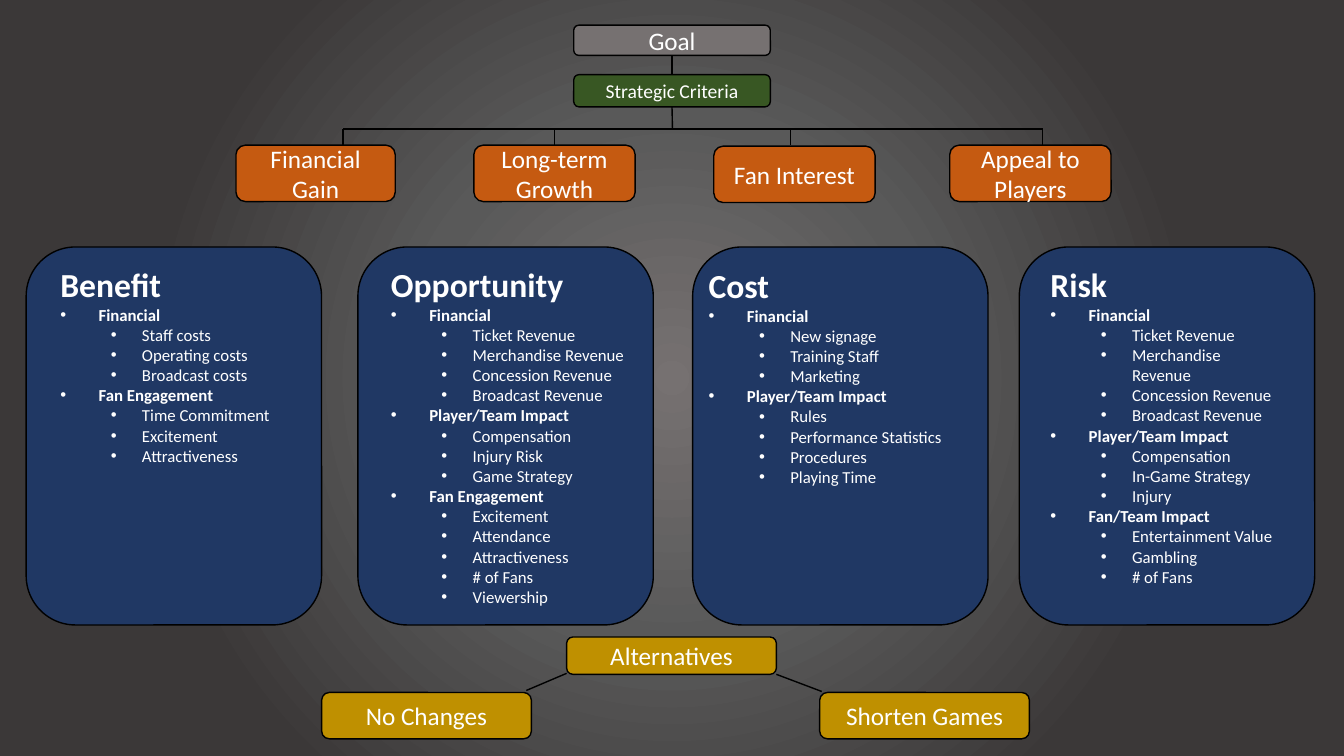
from dataclasses import dataclass
from typing import Optional

from pptx import Presentation
from pptx.dml.color import RGBColor
from pptx.enum.shapes import MSO_CONNECTOR, MSO_SHAPE
from pptx.enum.text import MSO_ANCHOR, MSO_AUTO_SIZE, PP_ALIGN
from pptx.oxml import parse_xml
from pptx.oxml.ns import nsdecls, qn
from pptx.shapes.autoshape import Shape
from pptx.shapes.connector import Connector
from pptx.slide import Slide
from pptx.text.text import Font, _Paragraph
from pptx.util import Inches, Pt

COLORS = {
    "goal": "767171",
    "strategy": "385723",
    "criterion": "C55A11",
    "panel": "203864",
    "alternative": "BF9000",
    "line": "000000",
    "text": "FFFFFF",
}
BACKGROUND = [(0, "767171"), (34, "595959"), (69, "3B3838"), (97, "3B3838")]
FORMATS = {
    "box": {"size": Pt(18)},
    "small": {"size": Pt(14)},
    "title": {"size": Pt(24), "bold": True},
    "heading": {"size": Pt(12), "bold": True},
    "item": {"size": Pt(12), "bold": False},
}
INDENTS = [(0.38, -0.38), (0.81, -0.31)]
PANEL_TOP, PANEL_WIDTH, PANEL_HEIGHT = 2.45, 2.93, 3.75
BRANCH_Y = 1.28


@dataclass
class Box:
    text: str
    left: float
    top: float
    width: float
    height: float
    color: str
    style: str = "box"


@dataclass
class Panel:
    title: str
    left: float
    text_left: float
    text_top: float
    text_width: float
    text_height: float
    groups: dict[str, list[str]]


GOAL = Box("Goal", 5.69, 0.25, 1.95, 0.3, "goal")
STRATEGY = Box("Strategic Criteria", 5.69, 0.74, 1.95, 0.32, "strategy", "small")
CRITERIA = [
    (Box("Financial Gain", 2.34, 1.44, 1.58, 0.56, "criterion"), 3.4),
    (Box("Long-term Growth", 4.7, 1.44, 1.6, 0.56, "criterion"), 5.5),
    (Box("Fan Interest", 7.08, 1.45, 1.6, 0.56, "criterion"), 7.84),
    (Box("Appeal to Players", 9.42, 1.44, 1.6, 0.56, "criterion"), 10.34),
]
ALTERNATIVES = [
    Box("Alternatives", 5.62, 6.32, 2.08, 0.37, "alternative"),
    Box("No Changes", 3.19, 6.87, 2.08, 0.46, "alternative"),
    Box("Shorten Games", 8.13, 6.87, 2.08, 0.46, "alternative"),
]
PANELS = [
    Panel("Benefit", 0.26, 0.5, 2.57, 2.48, 2.13, {
        "Financial": ["Staff costs", "Operating costs", "Broadcast costs"],
        "Fan Engagement": ["Time Commitment", "Excitement", "Attractiveness"],
    }),
    Panel("Opportunity", 3.55, 3.78, 2.57, 2.54, 3.53, {
        "Financial": ["Ticket Revenue", "Merchandise Revenue",
                      "Concession Revenue", "Broadcast Revenue"],
        "Player/Team Impact": ["Compensation", "Injury Risk", "Game Strategy"],
        "Fan Engagement": ["Excitement", "Attendance", "Attractiveness",
                           "# of Fans", "Viewership"],
    }),
    Panel("Cost", 6.87, 6.93, 2.58, 2.79, 2.32, {
        "Financial": ["New signage", "Training Staff", "Marketing"],
        "Player/Team Impact": ["Rules", "Performance Statistics",
                               "Procedures", "Playing Time"],
    }),
    Panel("Risk", 10.11, 10.32, 2.57, 2.5, 3.33, {
        "Financial": ["Ticket Revenue", "Merchandise Revenue",
                      "Concession Revenue", "Broadcast Revenue"],
        "Player/Team Impact": ["Compensation", "In-Game Strategy", "Injury"],
        "Fan/Team Impact": ["Entertainment Value", "Gambling", "# of Fans"],
    }),
]


def rgb(name: str) -> RGBColor:
    return RGBColor.from_string(COLORS[name])


def set_background(s: Slide) -> None:
    stops = "".join(
        f'<a:gs pos="{pos * 1000}"><a:srgbClr val="{color}"/></a:gs>'
        for pos, color in BACKGROUND
    )
    s.background.fill.gradient()
    grad = next(s.element.iter(qn("a:gradFill")))
    grad.getparent().replace(grad, parse_xml(
        f'<a:gradFill {nsdecls("a")} rotWithShape="1"><a:gsLst>{stops}</a:gsLst>'
        '<a:path path="circle"><a:fillToRect l="50000" t="50000" r="50000" b="50000"/>'
        '</a:path></a:gradFill>'
    ))


def format_font(font: Font, style: str) -> None:
    for name, value in {"name": "Calibri", **FORMATS[style]}.items():
        setattr(font, name, value)
    font.color.rgb = rgb("text")


def add_round_rect(s: Slide, left: float, top: float, width: float,
                   height: float, color: str) -> Shape:
    sp = s.shapes.add_shape(MSO_SHAPE.ROUNDED_RECTANGLE, Inches(left), Inches(top),
                            Inches(width), Inches(height))
    sp.shadow.inherit = False
    sp.fill.solid()
    sp.fill.fore_color.rgb = rgb(color)
    sp.line.color.rgb = rgb("line")
    sp.line.width = Pt(1)
    return sp


def add_box(s: Slide, box: Box) -> Shape:
    sp = add_round_rect(s, box.left, box.top, box.width, box.height, box.color)
    tf = sp.text_frame
    tf.word_wrap = True
    tf.vertical_anchor = MSO_ANCHOR.MIDDLE
    p = tf.paragraphs[0]
    p.alignment = PP_ALIGN.CENTER
    r = p.add_run()
    r.text = box.text
    format_font(r.font, box.style)
    return sp


def add_line(s: Slide, x1: float, y1: float, x2: float, y2: float,
             begin: Optional[Shape] = None, end: Optional[Shape] = None) -> Connector:
    line = s.shapes.add_connector(MSO_CONNECTOR.STRAIGHT, Inches(x1), Inches(y1),
                                  Inches(x2), Inches(y2))
    line.line.color.rgb = rgb("line")
    line.line.width = Pt(1)
    line.element.spPr.append(parse_xml(f'<a:effectLst {nsdecls("a")}/>'))
    if begin is not None:
        line.begin_connect(begin, 2)
    if end is not None:
        line.end_connect(end, 0)
    return line


def add_bullet(p: _Paragraph, text: str, level: int) -> None:
    p.level = level
    pPr = p._p.get_or_add_pPr()
    for name, value in zip(("marL", "indent"), INDENTS[level]):
        pPr.set(name, str(Inches(value)))
    pPr.append(parse_xml(f'<a:buFont {nsdecls("a")} typeface="Arial"/>'))
    pPr.append(parse_xml(f'<a:buChar {nsdecls("a")} char="•"/>'))
    r = p.add_run()
    r.text = text
    format_font(r.font, ("heading", "item")[level])


def add_panel(s: Slide, panel: Panel) -> None:
    add_round_rect(s, panel.left, PANEL_TOP, PANEL_WIDTH, PANEL_HEIGHT, "panel")
    tf = s.shapes.add_textbox(Inches(panel.text_left), Inches(panel.text_top),
                              Inches(panel.text_width),
                              Inches(panel.text_height)).text_frame
    tf.word_wrap = True
    tf.auto_size = MSO_AUTO_SIZE.SHAPE_TO_FIT_TEXT
    r = tf.paragraphs[0].add_run()
    r.text = panel.title
    format_font(r.font, "title")
    for heading, items in panel.groups.items():
        add_bullet(tf.add_paragraph(), heading, 0)
        for item in items:
            add_bullet(tf.add_paragraph(), item, 1)


def main() -> None:
    prs = Presentation()
    prs.slide_width, prs.slide_height = Inches(13.33), Inches(7.5)
    s = prs.slides.add_slide(prs.slide_layouts[6])
    set_background(s)

    goal, strategy = add_box(s, GOAL), add_box(s, STRATEGY)
    add_line(s, 6.67, 0.55, 6.67, 0.74, goal, strategy)
    add_line(s, 6.67, 1.06, 6.67, BRANCH_Y, strategy)
    add_line(s, CRITERIA[-1][1], BRANCH_Y, CRITERIA[0][1], BRANCH_Y)
    for box, x in CRITERIA:
        sp = add_box(s, box)
        centered = abs(box.left + box.width / 2 - x) < 0.01
        add_line(s, x, BRANCH_Y, x, 1.44, end=sp if centered else None)

    for panel in PANELS:
        add_panel(s, panel)

    for box in ALTERNATIVES:
        add_box(s, box)
    add_line(s, 5.22, 6.85, 5.62, 6.68)
    add_line(s, 7.7, 6.69, 8.15, 6.86)
    prs.save("out.pptx")


if __name__ == "__main__":
    main()
